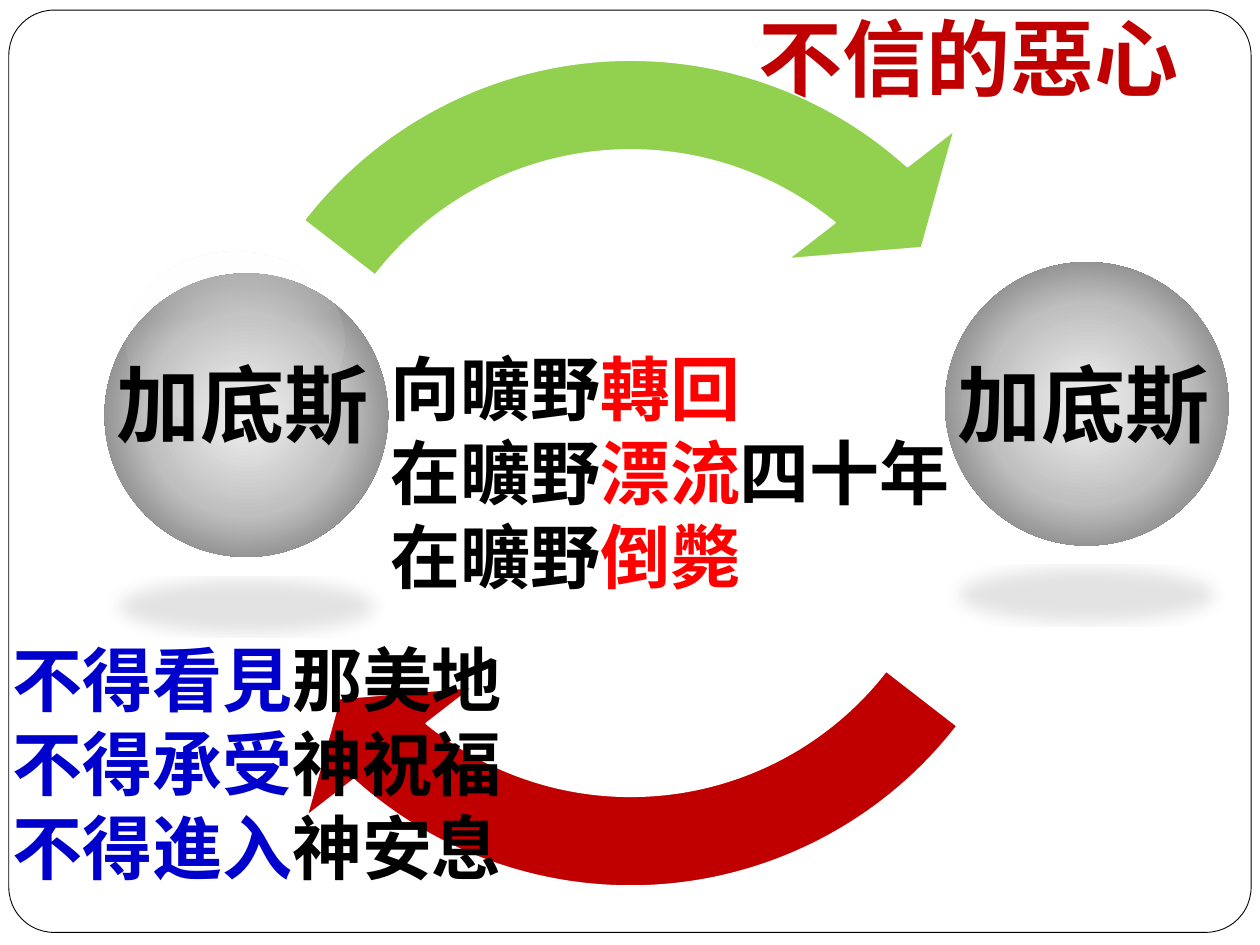
from dataclasses import dataclass

from lxml.etree import SubElement
from pptx import Presentation
from pptx.dml.color import RGBColor
from pptx.enum.shapes import MSO_SHAPE
from pptx.oxml import parse_xml
from pptx.oxml.ns import nsdecls, qn
from pptx.util import Inches, Pt

FONT = "Noto Sans CJK SC"
COLORS = {
    "black": "000000", "white": "FFFFFF", "red": "FF0000",
    "crimson": "C00000", "green": "92D050", "blue": "0000CC",
    "sphere_light": "F2F2F2", "sphere_middle": "BFBFBF", "sphere_dark": "595959",
}


@dataclass
class Label:
    left: float
    top: float
    width: float
    height: float
    size: int
    lines: list[list[tuple[str, str]]]
    wrap: bool = True


@dataclass
class CycleArrow:
    color: str
    end_angle: float
    start_angle: float


PLACE = [[("加底斯", "black")]]
LEFT_PLACE = Label(0.83, 2.75, 2.22, 0.91, 48, PLACE, wrap=False)
RIGHT_PLACE = Label(7.5, 2.75, 2.22, 0.91, 48, PLACE, wrap=False)
WILDERNESS = Label(3, 2.69, 4.83, 2.12, 40, [
    [("向曠野", "black"), ("轉回", "red")],
    [("在曠野", "black"), ("漂流", "red"), ("四十年", "black")],
    [("在曠野", "black"), ("倒斃", "red")],
])
UNBELIEF = Label(5.92, 0, 3.57, 0.91, 48, [[("不信的惡心", "crimson")]], wrap=False)
LOSSES = Label(0, 5, 4.17, 2.12, 40, [
    [("不得看見", "blue"), ("那美地", "black")],
    [("不得承受", "blue"), ("神祝福", "black")],
    [("不得進入", "blue"), ("神安息", "black")],
])
ARROWS = [CycleArrow("crimson", 130.83, 37.75), CycleArrow("green", 310.83, 217.75)]


def rgb(name: str) -> RGBColor:
    return RGBColor.from_string(COLORS[name])


def add_plain_shape(slide, kind, left: float, top: float, width: float, height: float):
    shape = slide.shapes.add_shape(
        kind, Inches(left), Inches(top), Inches(width), Inches(height))
    shape.shadow.inherit = False
    shape.line.fill.background()
    return shape


def set_gradient(shape, stops: list[tuple[int, str, int]], direction: str) -> None:
    """Fill with stops of (position %, colour, opacity %)."""
    stop_xml = "".join(
        f'<a:gs pos="{position * 1000}"><a:srgbClr val="{COLORS[color]}">'
        f'<a:alpha val="{opacity * 1000}"/></a:srgbClr></a:gs>'
        for position, color, opacity in stops)
    gradient = parse_xml(
        f'<a:gradFill {nsdecls("a")} rotWithShape="1"><a:gsLst>{stop_xml}</a:gsLst>'
        f'{direction}</a:gradFill>')
    shape._element.spPr.find(qn("a:prstGeom")).addnext(gradient)


def add_frame(slide) -> None:
    frame = add_plain_shape(slide, MSO_SHAPE.ROUNDED_RECTANGLE, 0.07, 0.08, 9.86, 7.32)
    frame.adjustments[0] = 0.049
    frame.fill.solid()
    frame.fill.fore_color.rgb = rgb("white")
    frame.line.color.rgb = rgb("black")
    frame.line.width = Pt(0.5)


def add_sphere(slide, left: float, top: float) -> None:
    """Add a shaded ball with a flattened shadow on the floor below it."""
    sphere = add_plain_shape(slide, MSO_SHAPE.OVAL, left, top, 2.25, 2.25)
    set_gradient(
        sphere,
        [(0, "sphere_light", 100), (50, "sphere_middle", 100), (100, "sphere_dark", 100)],
        '<a:path path="circle"><a:fillToRect l="50000" t="50000" r="50000" b="50000"/>'
        '</a:path>')
    effects = sphere._element.spPr.find(qn("a:effectLst"))
    effects.append(parse_xml(
        f'<a:outerShdw {nsdecls("a")} blurRad="{Pt(10)}" dist="{Pt(13)}" dir="5400000" '
        f'sx="90000" sy="-19000" rotWithShape="0"><a:srgbClr val="{COLORS["black"]}">'
        '<a:alpha val="11000"/></a:srgbClr></a:outerShdw>'))


def add_highlight(slide) -> None:
    highlight = add_plain_shape(slide, MSO_SHAPE.OVAL, 1, 2, 1.73, 1.42)
    set_gradient(
        highlight, [(63, "white", 7), (72, "white", 15), (91, "white", 28)],
        '<a:lin ang="16200000" scaled="0"/>')


def add_label(slide, label: Label) -> None:
    box = slide.shapes.add_textbox(
        Inches(label.left), Inches(label.top), Inches(label.width), Inches(label.height))
    frame = box.text_frame
    frame.word_wrap = label.wrap
    for index, line in enumerate(label.lines):
        paragraph = frame.add_paragraph() if index else frame.paragraphs[0]
        for text, color in line:
            run = paragraph.add_run()
            run.text = text
            run.font.size = Pt(label.size)
            run.font.bold = True
            run.font.name = FONT
            run.font.color.rgb = rgb(color)
            SubElement(run.font._element, qn("a:ea")).set("typeface", FONT)


def add_cycle_arrow(slide, arrow: CycleArrow) -> None:
    shape = add_plain_shape(slide, MSO_SHAPE.CIRCULAR_ARROW, 1.25, 0, 7.51, 7.51)
    # Angles are stored in 60000ths of a degree, adjustments in 100000ths.
    head, end, start = (
        angle * 0.6 for angle in (11.42, arrow.end_angle, arrow.start_angle))
    for index, value in enumerate((0.095, head, end, start, 0.111)):
        shape.adjustments[index] = value
    shape.fill.solid()
    shape.fill.fore_color.rgb = rgb(arrow.color)
    shape.line.color.rgb = rgb("white")
    shape.line.width = Pt(1)


def main() -> None:
    presentation = Presentation()
    presentation.slide_width = Inches(10)
    presentation.slide_height = Inches(7.5)
    slide = presentation.slides.add_slide(presentation.slide_layouts[6])

    add_frame(slide)
    add_sphere(slide, 0.83, 2.17)
    add_highlight(slide)
    add_label(slide, LEFT_PLACE)
    add_sphere(slide, 7.5, 2.08)
    for label in (RIGHT_PLACE, WILDERNESS, UNBELIEF):
        add_label(slide, label)
    for arrow in ARROWS:
        add_cycle_arrow(slide, arrow)
    add_label(slide, LOSSES)

    presentation.save("out.pptx")


if __name__ == "__main__":
    main()
